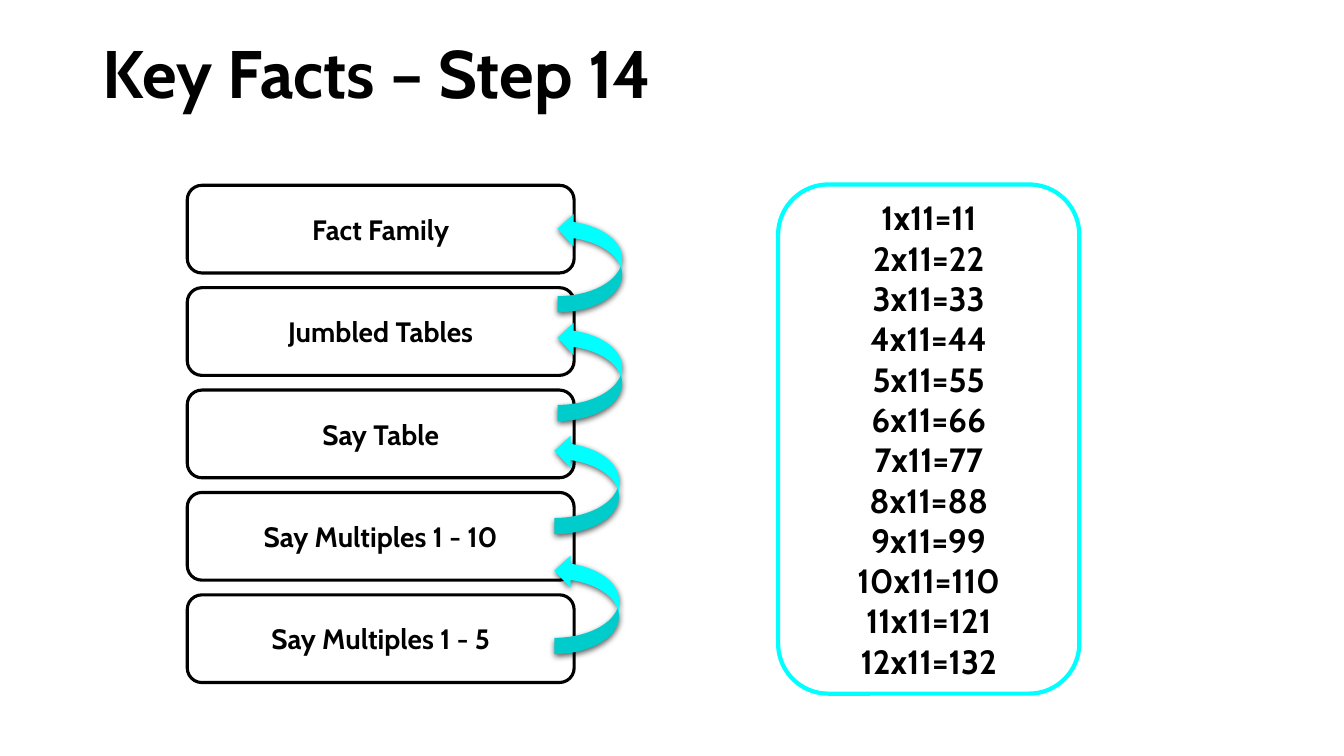
from lxml import etree
from pptx import Presentation
from pptx.dml.color import RGBColor
from pptx.enum.shapes import MSO_SHAPE
from pptx.enum.text import MSO_ANCHOR, PP_ALIGN
from pptx.oxml.ns import qn
from pptx.util import Cm, Pt

ROUND = MSO_SHAPE.ROUNDED_RECTANGLE
CURVED = MSO_SHAPE.CURVED_RIGHT_ARROW
MIDDLE = MSO_ANCHOR.MIDDLE
LEFT, CENTER = PP_ALIGN.LEFT, PP_ALIGN.CENTER

# Content
TITLE = "Key Facts – Step 14"
STEPS = [  # bottom to top
    "Say Multiples 1 - 5",
    "Say Multiples 1 - 10",
    "Say Table",
    "Jumbled Tables",
    "Fact Family",
]
FACTS = [f"{n}x11={n * 11}" for n in range(1, 13)]
ARROWS = [(13.97, 13.97), (13.97, 10.95), (14.05, 8.1), (14.05, 5.36)]  # left, top

FONT = "Cabin"
COLORS = {"ink": "000000", "paper": "FFFFFF", "cyan": "00FFFF"}

# Layout in cm
STEP_LEFT, STEP_BASE, STEP_GAP = 4.72, 14.99, 2.58
STEP_W, STEP_H = 9.75, 2.21
ARROW_W, ARROW_H = 1.63, 2.51


def color(name):
    return RGBColor.from_string(COLORS[name])


def write(shape, text, size, align):
    frame = shape.text_frame
    frame.word_wrap = True
    frame.vertical_anchor = MIDDLE
    frame.text = text
    for para in frame.paragraphs:
        para.alignment = align
        for run in para.runs:
            run.font.name = FONT
            run.font.size = Pt(size)
            run.font.bold = True
            run.font.color.rgb = color("ink")


def add_box(left, top, width, height, edge, weight, text, size):
    box = slide.shapes.add_shape(ROUND, Cm(left), Cm(top), Cm(width), Cm(height))
    box.shadow.inherit = False
    box.fill.solid()
    box.fill.fore_color.rgb = color("paper")
    box.line.color.rgb = color(edge)
    box.line.width = Pt(weight)
    write(box, text, size, CENTER)


def add_shadow(shape):
    shape.shadow.inherit = False
    effects = shape._element.spPr.find(qn("a:effectLst"))
    outer = etree.SubElement(
        effects, qn("a:outerShdw"), blurRad=str(Pt(4.5)), dist=str(Pt(1.5)),
        dir="5400000", algn="ctr", rotWithShape="0")
    tint = etree.SubElement(outer, qn("a:srgbClr"), val=COLORS["ink"])
    etree.SubElement(tint, qn("a:alpha"), val="63000")


deck = Presentation()
deck.slide_width, deck.slide_height = Cm(33.87), Cm(19.05)
slide = deck.slides.add_slide(deck.slide_layouts[6])

# Title
title = slide.shapes.add_textbox(Cm(2.34), Cm(0.1), Cm(29.21), Cm(3.68))
write(title, TITLE, 48, LEFT)
title.text_frame.paragraphs[0].line_spacing = 0.9

# Ladder of steps
for i, step in enumerate(STEPS):
    add_box(STEP_LEFT, STEP_BASE - i * STEP_GAP, STEP_W, STEP_H,
            "ink", 2.25, step, 20)

# Arrows up the ladder
for left, top in ARROWS:
    arrow = slide.shapes.add_shape(
        CURVED, Cm(left), Cm(top), Cm(ARROW_W), Cm(ARROW_H))
    arrow.rotation = 180
    arrow.fill.solid()
    arrow.fill.fore_color.rgb = color("cyan")
    arrow.line.fill.background()
    add_shadow(arrow)

# Times table
add_box(19.61, 4.65, 7.59, 12.83, "cyan", 3, "\n".join(FACTS), 24)

deck.save("out.pptx")
